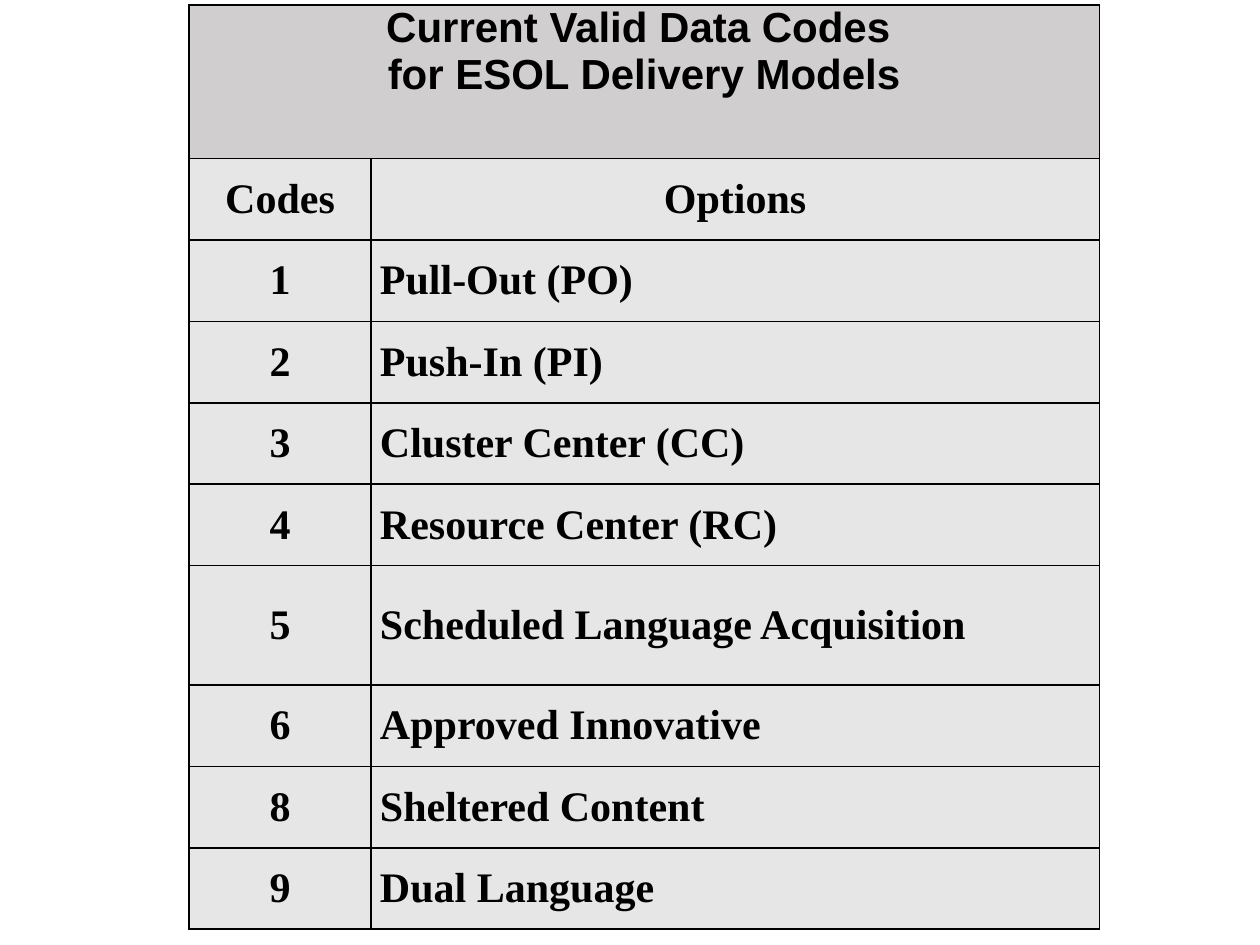
from pptx import Presentation
from pptx.dml.color import RGBColor
from pptx.enum.text import MSO_ANCHOR, PP_ALIGN
from pptx.util import Cm, Pt
from lxml import etree

TOP, MIDDLE = MSO_ANCHOR.TOP, MSO_ANCHOR.MIDDLE
LEFT, CENTER = PP_ALIGN.LEFT, PP_ALIGN.CENTER
NAMESPACE = "{http://schemas.openxmlformats.org/drawingml/2006/main}"

TITLE = "Current Valid Data Codes \nfor ESOL Delivery Models"
OPTIONS = [
    ("1", "Pull-Out (PO)"),
    ("2", "Push-In (PI)"),
    ("3", "Cluster Center (CC)"),
    ("4", "Resource Center (RC)"),
    ("5", "Scheduled Language Acquisition"),
    ("6", "Approved Innovative"),
    ("8", "Sheltered Content"),
    ("9", "Dual Language"),
]
COLUMN_WIDTHS = [3.67, 14.68]
TITLE_HEIGHT, ROW_HEIGHT, TALL_HEIGHT = 3.1, 1.64, 2.41
TALL_CODE = "5"


def colour(hex_text):
    return RGBColor.from_string(hex_text)


class CodeSlide:
    ink = "000000"
    title_fill = "D0CECE"
    body_fill = "E7E6E6"
    title_font = "Arial"
    body_font = "Times New Roman"
    size = 24

    def __init__(self, page):
        self.page = page

    def table(self, left, top, widths, heights):
        frame = self.page.shapes.add_table(
            len(heights), len(widths), Cm(left), Cm(top),
            Cm(sum(widths)), Cm(sum(heights)))
        table = frame.table
        table.first_row = table.horz_banding = False
        for column, width in zip(table.columns, widths):
            column.width = Cm(width)
        for row, height in zip(table.rows, heights):
            row.height = Cm(height)
        return table

    def borders(self, cell, left_width):
        properties = cell._tc.get_or_add_tcPr()
        for side, width in (("L", left_width), ("R", 1), ("T", 1), ("B", 1)):
            line = etree.SubElement(properties, NAMESPACE + "ln" + side, w=str(Pt(width)))
            solid = etree.SubElement(line, NAMESPACE + "solidFill")
            etree.SubElement(solid, NAMESPACE + "srgbClr", val=self.ink)

    def cell(self, cell, text, fill, font, align=CENTER, anchor=MIDDLE, left_width=1.0):
        self.borders(cell, left_width)
        cell.fill.solid()
        cell.fill.fore_color.rgb = colour(fill)
        cell.margin_left = cell.margin_right = Cm(0.18)
        cell.margin_top = cell.margin_bottom = 0
        cell.vertical_anchor = anchor
        cell.text_frame.text = text
        for paragraph in cell.text_frame.paragraphs:
            paragraph.alignment = align
            for span in paragraph.runs:
                span.font.name = font
                span.font.size = Pt(self.size)
                span.font.bold = True
                span.font.color.rgb = colour(self.ink)


def main():
    deck = Presentation()
    deck.slide_width, deck.slide_height = Cm(25.4), Cm(19.05)
    slide = CodeSlide(deck.slides.add_slide(deck.slide_layouts[6]))

    # Table grid
    heights = [TITLE_HEIGHT, ROW_HEIGHT] + [
        TALL_HEIGHT if code == TALL_CODE else ROW_HEIGHT for code, _ in OPTIONS]
    table = slide.table(3.81, 0.1, COLUMN_WIDTHS, heights)

    # Title across both columns
    table.cell(0, 0).merge(table.cell(0, 1))
    slide.cell(table.cell(0, 0), TITLE, slide.title_fill, slide.title_font,
               anchor=TOP, left_width=1.5)

    # Column headings and codes
    for index, (code, option) in enumerate([("Codes", "Options")] + OPTIONS, start=1):
        slide.cell(table.cell(index, 0), code, slide.body_fill, slide.body_font,
                   left_width=1.5)
        slide.cell(table.cell(index, 1), option, slide.body_fill, slide.body_font,
                   align=CENTER if index == 1 else LEFT)

    deck.save("out.pptx")


if __name__ == "__main__":
    main()
